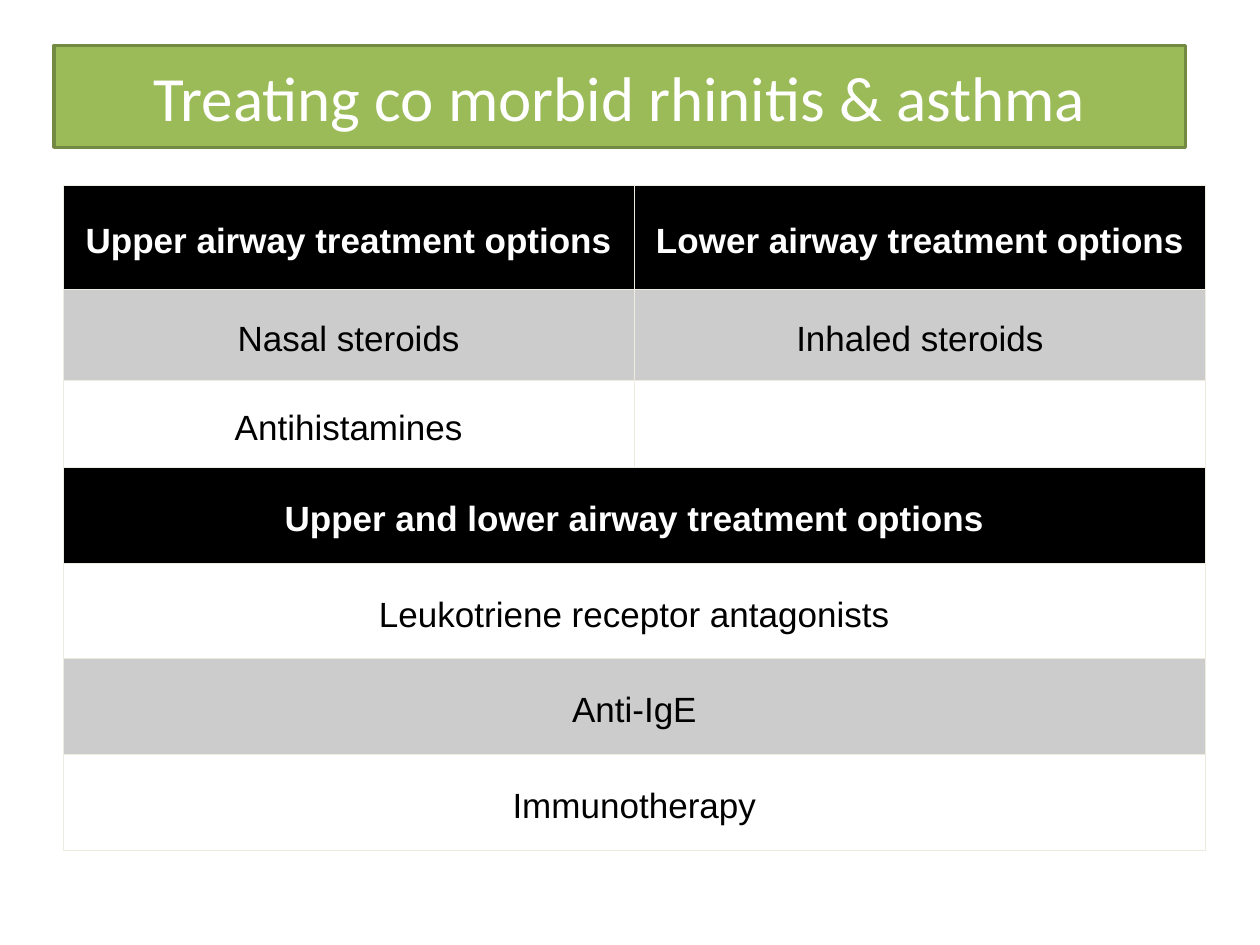
from pptx import Presentation
from pptx.dml.color import RGBColor
from pptx.enum.shapes import MSO_SHAPE as Shape
from pptx.enum.text import MSO_ANCHOR as Anchor, PP_ALIGN as Align
from pptx.oxml import parse_xml
from pptx.oxml.ns import nsdecls
from pptx.util import Inches, Pt

WHITE = RGBColor(0xFF, 0xFF, 0xFF)
BLACK = RGBColor(0x00, 0x00, 0x00)
GREY = RGBColor(0xCC, 0xCC, 0xCC)
GREEN = RGBColor(0x9B, 0xBB, 0x59)
DARK_GREEN = RGBColor(0x73, 0x8A, 0x42)
IVORY = RGBColor(0xEE, 0xEC, 0xE1)

GRID_COLUMNS, GRID_ROWS = 1000, 750

TITLE_FORMAT = {"name": "Calibri", "size": Pt(36), "color": WHITE}
HEADING_FORMAT = {"name": "Arial", "size": Pt(20), "bold": True, "color": WHITE}
OPTION_FORMAT = {"name": "Arial", "size": Pt(20), "bold": False, "color": BLACK}

TREATMENTS = [
    (83, BLACK, ["Upper airway treatment options", "Lower airway treatment options"]),
    (72, GREY, ["Nasal steroids", "Inhaled steroids"]),
    (69, None, ["Antihistamines", ""]),
    (76, BLACK, ["Upper and lower airway treatment options"]),
    (76, None, ["Leukotriene receptor antagonists"]),
    (76, GREY, ["Anti-IgE"]),
    (76, None, ["Immunotherapy"]),
]


class SlideBuilder:
    def __init__(self, presentation):
        self.slide = presentation.slides.add_slide(presentation.slide_layouts[6])
        self.column = presentation.slide_width / GRID_COLUMNS
        self.row = presentation.slide_height / GRID_ROWS

    def place(self, left, top, width, height):
        return (round(left * self.column), round(top * self.row),
                round(width * self.column), round(height * self.row))

    def add_text(self, paragraph, text, font_format, line_spacing=1.0):
        paragraph.alignment = Align.CENTER
        paragraph.line_spacing = line_spacing
        run = paragraph.add_run()
        run.text = text
        for name, value in font_format.items():
            if name == "color":
                run.font.color.rgb = value
            else:
                setattr(run.font, name, value)

    def title(self, text, *box):
        shape = self.slide.shapes.add_shape(Shape.RECTANGLE, *self.place(*box))
        shape.shadow.inherit = False
        shape.fill.solid()
        shape.fill.fore_color.rgb = GREEN
        shape.line.color.rgb = DARK_GREEN
        shape.line.width = Pt(2)
        shape.text_frame.word_wrap = True
        shape.text_frame.vertical_anchor = Anchor.MIDDLE
        self.add_text(shape.text_frame.paragraphs[0], text, TITLE_FORMAT)

    def style_cell(self, cell, fill):
        properties = cell._tc.get_or_add_tcPr()
        for side in ("lnL", "lnR", "lnT", "lnB"):
            properties.append(parse_xml(
                f'<a:{side} {nsdecls("a")} w="{Pt(0.5)}"><a:solidFill>'
                f'<a:srgbClr val="{IVORY}"/></a:solidFill></a:{side}>'))
        cell.vertical_anchor = Anchor.MIDDLE
        if fill is None:
            cell.fill.background()
        else:
            cell.fill.solid()
            cell.fill.fore_color.rgb = fill

    def table(self, rows, column_count, left, top, width):
        height = sum(row_height for row_height, _, _ in rows)
        frame = self.slide.shapes.add_table(
            len(rows), column_count, *self.place(left, top, width, height))
        table = frame.table
        table.first_row = table.horz_banding = False
        for index, (row_height, fill, texts) in enumerate(rows):
            table.rows[index].height = round(row_height * self.row)
            cells = list(table.rows[index].cells)
            for cell in cells:
                self.style_cell(cell, fill)
            if len(texts) < column_count:
                cells[0].merge(cells[-1])
            font_format = HEADING_FORMAT if fill == BLACK else OPTION_FORMAT
            for cell, text in zip(cells, texts):
                if text:
                    self.add_text(cell.text_frame.paragraphs[0], text, font_format, 1.2)


def main():
    presentation = Presentation()
    presentation.slide_width = Inches(10)
    presentation.slide_height = Inches(7.5)
    builder = SlideBuilder(presentation)
    builder.title("Treating co morbid rhinitis & asthma", 43, 36, 898, 81)
    builder.table(TREATMENTS, 2, 50, 147, 907)
    presentation.save("out.pptx")


if __name__ == "__main__":
    main()
